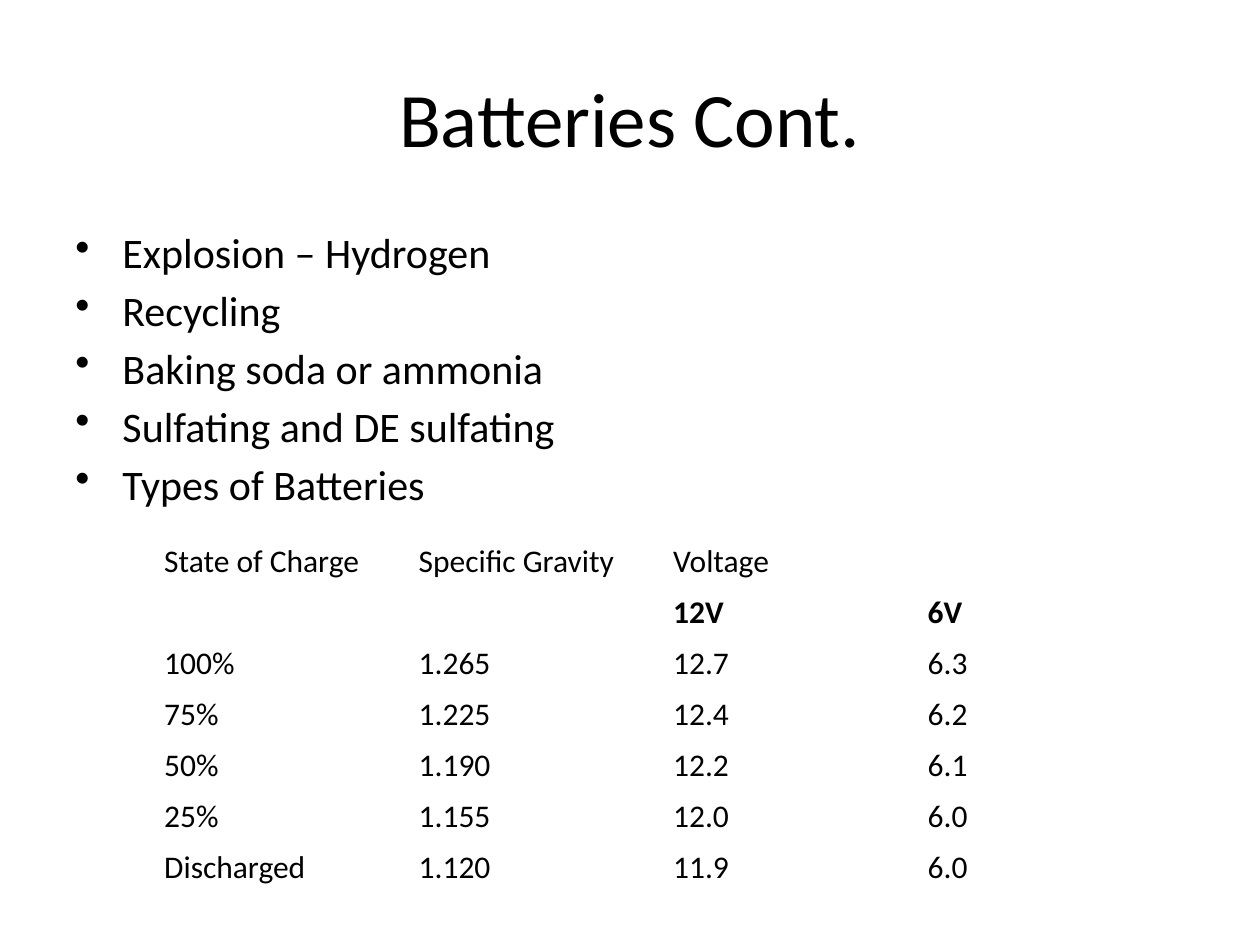
from dataclasses import dataclass

from lxml.etree import SubElement
from pptx import Presentation
from pptx.dml.color import RGBColor
from pptx.enum.text import MSO_ANCHOR, PP_ALIGN
from pptx.oxml.ns import qn
from pptx.slide import Slide
from pptx.table import _Cell
from pptx.text.text import TextFrame, _Paragraph
from pptx.util import Cm, Pt

FONT = "Calibri"
INK = "000000"
HANGING_INDENT = Cm(0.95)
CELL_MARGIN = Cm(0.13)
COLUMN_WIDTH = Cm(5.13)
ROW_HEIGHT = Cm(1.03)

TOPICS = [
    "Explosion – Hydrogen",
    "Recycling",
    "Baking soda or ammonia",
    "Sulfating and DE sulfating",
    "Types of Batteries",
]


@dataclass
class ChargeRow:
    state: str
    gravity: str
    twelve_volt: str
    six_volt: str
    bold: bool = False

    def values(self) -> list[str]:
        return [self.state, self.gravity, self.twelve_volt, self.six_volt]


CHARGE_ROWS = [
    ChargeRow("State of Charge", "Specific Gravity", "Voltage", ""),
    ChargeRow("", "", "12V", "6V", bold=True),
    ChargeRow("100%", "1.265", "12.7", "6.3"),
    ChargeRow("75%", "1.225", "12.4", "6.2"),
    ChargeRow("50%", "1.190", "12.2", "6.1"),
    ChargeRow("25%", "1.155", "12.0", "6.0"),
    ChargeRow("Discharged", "1.120", "11.9", "6.0"),
]


def color(hex_code: str) -> RGBColor:
    return RGBColor.from_string(hex_code)


def style(paragraph: _Paragraph, size: int, bold: bool = False) -> None:
    font = paragraph.font
    font.name = FONT
    font.size = Pt(size)
    font.bold = bold
    font.color.rgb = color(INK)
    for run in paragraph.runs:
        run.font.name = FONT
        run.font.size = Pt(size)
        run.font.bold = bold
        run.font.color.rgb = color(INK)


def add_text(slide: Slide, top: Cm, height: Cm, text: str) -> TextFrame:
    frame = slide.shapes.add_textbox(Cm(1.27), top, Cm(22.86), height).text_frame
    frame.word_wrap = True
    frame.text = text
    return frame


def draw_title(slide: Slide) -> None:
    title = add_text(slide, Cm(0.76), Cm(3.18), "Batteries Cont.")
    title.vertical_anchor = MSO_ANCHOR.MIDDLE
    title.paragraphs[0].alignment = PP_ALIGN.CENTER
    style(title.paragraphs[0], 44)


def draw_topics(slide: Slide) -> None:
    topics = add_text(slide, Cm(4.45), Cm(12.57), "\n".join(TOPICS))
    for index, topic in enumerate(topics.paragraphs):
        properties = topic._p.get_or_add_pPr()
        properties.set("marL", str(HANGING_INDENT))
        properties.set("indent", str(-HANGING_INDENT))
        SubElement(properties, qn("a:buChar")).set("char", "•")
        topic.space_before = Pt(4.3 if index else 0)
        style(topic, 24)


def fill_cell(cell: _Cell, text: str, bold: bool) -> None:
    cell.fill.background()
    cell.vertical_anchor = MSO_ANCHOR.MIDDLE
    cell.margin_left = cell.margin_right = CELL_MARGIN
    cell.margin_top = cell.margin_bottom = CELL_MARGIN
    cell.text_frame.text = text
    style(cell.text_frame.paragraphs[0], 18, bold)


def draw_charge_table(slide: Slide) -> None:
    column_count = len(CHARGE_ROWS[0].values())
    charge_table = slide.shapes.add_table(
        len(CHARGE_ROWS), column_count, Cm(3.18), Cm(10.8),
        COLUMN_WIDTH * column_count, ROW_HEIGHT * len(CHARGE_ROWS),
    ).table
    charge_table.first_row = False
    charge_table.horz_banding = False
    for column in charge_table.columns:
        column.width = COLUMN_WIDTH
    for row_index, charge in enumerate(CHARGE_ROWS):
        charge_table.rows[row_index].height = ROW_HEIGHT
        for column_index, value in enumerate(charge.values()):
            fill_cell(charge_table.cell(row_index, column_index), value, charge.bold)
    charge_table.cell(0, 2).merge(charge_table.cell(0, 3))


def main() -> None:
    presentation = Presentation()
    presentation.slide_width = Cm(25.4)
    presentation.slide_height = Cm(19.05)
    slide = presentation.slides.add_slide(presentation.slide_layouts[6])
    slide.background.fill.solid()
    slide.background.fill.fore_color.rgb = color("FFFFFF")
    draw_title(slide)
    draw_topics(slide)
    draw_charge_table(slide)
    presentation.save("out.pptx")


if __name__ == "__main__":
    main()
